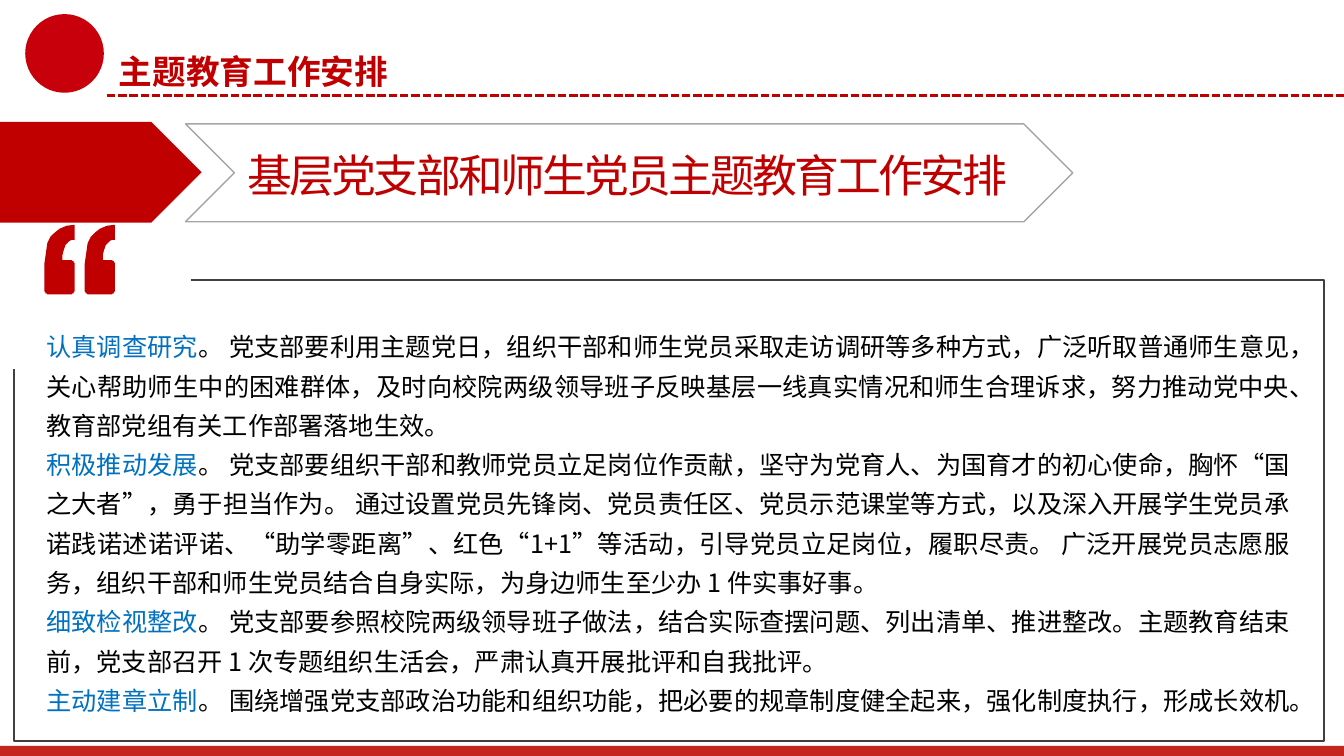
from pptx import Presentation
from pptx import util as u
from pptx.dml import color
from pptx.enum import dml, shapes, text
from pptx.oxml import ns
from lxml import etree

SCALE = 9144
FONT = "Noto Sans CJK SC"
RED, BLUE, BLACK = "C00000", "0070C0", "000000"

TOPICS = [
    ("认真调查研究", "。 党支部要利用主题党日，组织干部和师生党员采取走访调研等多种方式，广泛听取普通师生意见，关心帮助师生中的困难群体，及时向校院两级领导班子反映基层一线真实情况和师生合理诉求，努力推动党中央、教育部党组有关工作部署落地生效。"),
    ("积极推动发展", "。 党支部要组织干部和教师党员立足岗位作贡献，坚守为党育人、为国育才的初心使命，胸怀“国之大者”，勇于担当作为。 通过设置党员先锋岗、党员责任区、党员示范课堂等方式，以及深入开展学生党员承诺践诺述诺评诺、“助学零距离”、红色“1+1”等活动，引导党员立足岗位，履职尽责。 广泛开展党员志愿服务，组织干部和师生党员结合自身实际，为身边师生至少办 1 件实事好事。"),
    ("细致检视整改", "。 党支部要参照校院两级领导班子做法，结合实际查摆问题、列出清单、推进整改。主题教育结束前，党支部召开 1 次专题组织生活会，严肃认真开展批评和自我批评。"),
    ("主动建章立制", "。 围绕增强党支部政治功能和组织功能，把必要的规章制度健全起来，强化制度执行，形成长效机。"),
]

QUOTE_CURVES = [
    [(0, 39), (0, 65), (0, 65), (0, 65)],
    [(0, 65), (0, 67), (2, 69), (5, 69)],
    [(26, 69), (28, 69), (30, 67), (30, 65)],
    [(30, 39), (30, 37), (28, 35), (26, 35)],
    [(18, 35), (18, 22), (22, 15), (30, 15)],
    [(30, 0), (5, 1), (1, 19), (0, 39)],
]


def px(length):
    return u.Emu(length * SCALE)


def rgb(value):
    return color.RGBColor.from_string(value)


def apply(target, values):
    for name, value in values.items():
        setattr(target, name, value)


def paint(shape, fill=None, line=None):
    shape.shadow.inherit = False
    if fill:
        shape.fill.solid()
        shape.fill.fore_color.rgb = rgb(fill)
    else:
        shape.fill.background()
    if line:
        shape.line.color.rgb = rgb(line)
        shape.line.width = u.Pt(1)
    else:
        shape.line.fill.background()


def add_block(page, kind, bounds, fill=None, line=None):
    paint(page.shapes.add_shape(kind, *map(px, bounds)), fill, line)


def add_outline(page, points, close, fill=None, line=None):
    builder = page.shapes.build_freeform(*points[0], scale=SCALE)
    builder.add_line_segments(points[1:], close=close)
    paint(builder.convert_to_shape(), fill, line)


def curve_points(curve, steps=8):
    for step in range(steps + 1):
        t = step / steps
        weights = ((1 - t) ** 3, 3 * t * (1 - t) ** 2, 3 * t * t * (1 - t), t ** 3)
        yield tuple(sum(w * p[axis] for w, p in zip(weights, curve)) for axis in (0, 1))


def add_quote(page, left, top):
    points = [(left + x, top + y) for curve in QUOTE_CURVES for x, y in curve_points(curve)]
    add_outline(page, points, True, fill=RED)


def add_dashed_rule(page, start, end):
    rule = page.shapes.add_connector(shapes.MSO_CONNECTOR.STRAIGHT, *map(px, start + end))
    rule.line.color.rgb = rgb(RED)
    apply(rule.line, {"width": u.Pt(2), "dash_style": dml.MSO_LINE.SQUARE_DOT})
    etree.SubElement(rule._element.spPr, ns.qn("a:effectLst"))


def add_span(para, words, size, ink, bold=False, spacing=0):
    span = para.add_run()
    span.text = words
    apply(span.font, {"name": FONT, "size": u.Pt(size), "bold": bold})
    span.font.color.rgb = rgb(ink)
    props = span._r.get_or_add_rPr()
    if spacing:
        props.set("spc", str(spacing))
    east = etree.Element(ns.qn("a:ea"), typeface=FONT)
    props.find(ns.qn("a:latin")).addnext(east)


def set_frame(box, bounds, inset=(10, 5)):
    apply(box, dict(zip(("left", "top", "width", "height"), map(px, bounds))))
    side, edge = map(px, inset)
    apply(box.text_frame, {
        "word_wrap": True, "auto_size": text.MSO_AUTO_SIZE.NONE,
        "vertical_anchor": text.MSO_ANCHOR.TOP,
        "margin_left": side, "margin_right": side,
        "margin_top": edge, "margin_bottom": edge,
    })
    return box.text_frame


def fill_title(box):
    para = set_frame(box, (111, 46, 302, 48), (7, 4)).paragraphs[0]
    para.alignment = text.PP_ALIGN.JUSTIFY
    add_span(para, "主题教育工作安排", 24, RED, bold=True)


def fill_topics(box):
    frame = set_frame(box, (36, 315, 1254, 404))
    for index, (topic, detail) in enumerate(TOPICS):
        para = frame.add_paragraph() if index else frame.paragraphs[0]
        props = para._p.get_or_add_pPr()
        apply(para, {"alignment": text.PP_ALIGN.JUSTIFY, "line_spacing": 1.3,
                     "space_before": u.Pt(0), "space_after": u.Pt(0)})
        props.set("marL", "0")
        props.set("indent", "0")
        etree.SubElement(props, ns.qn("a:buNone"))
        add_span(para, topic, 18, BLUE)
        add_span(para, detail, 18, BLACK)


def add_heading(page):
    box = page.shapes.add_textbox(0, 0, 0, 0)
    para = set_frame(box, (236, 142, 1003, 64)).paragraphs[0]
    add_span(para, "基层党支部和师生党员主题教育工作安排", 32, RED, spacing=-200)


def main():
    deck = Presentation()
    apply(deck, {"slide_width": px(1333), "slide_height": px(750)})
    page = deck.slides.add_slide(deck.slide_layouts[1])
    kinds = shapes.MSO_SHAPE
    add_block(page, kinds.OVAL, (25, 14, 78, 78), fill="C7000B")
    add_dashed_rule(page, (106, 95), (1333, 95))
    add_block(page, kinds.RECTANGLE, (0, 740, 1333, 10), fill="C4261D")
    frame_points = [(189, 278), (1313, 278), (1313, 735), (14, 735), (14, 366)]
    add_outline(page, frame_points, False, line="404040")
    for left in (44, 84):
        add_quote(page, left, 223)
    fill_topics(page.placeholders[1])
    fill_title(page.shapes.title)
    add_block(page, kinds.CHEVRON, (184, 123, 880, 97), line="A6A6A6")
    add_block(page, kinds.PENTAGON, (0, 121, 200, 100), fill=RED)
    add_heading(page)
    deck.save("out.pptx")


if __name__ == "__main__":
    main()
